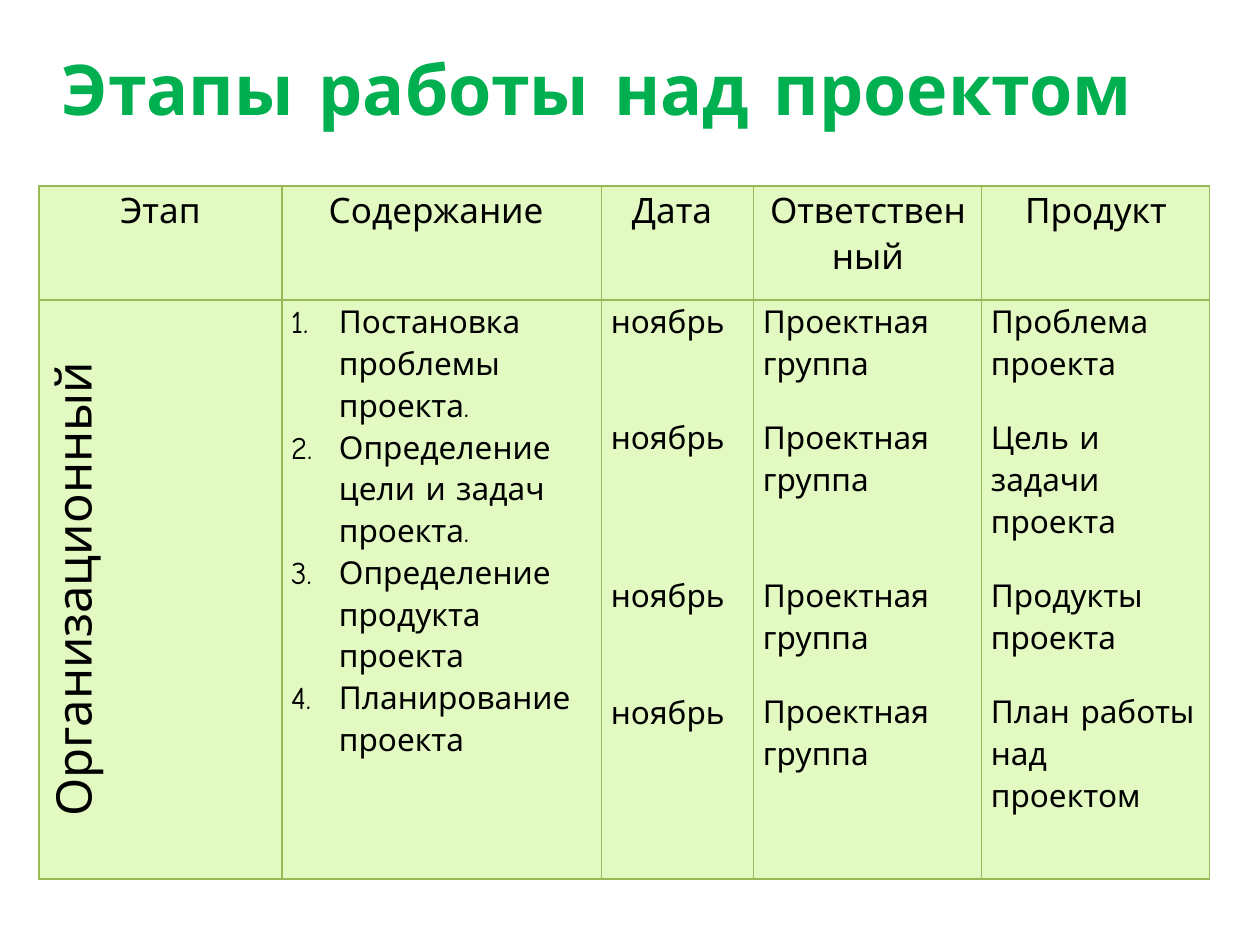
from lxml import etree
from pptx import Presentation, util as u
from pptx.dml.color import RGBColor
from pptx.enum import text
from pptx.oxml import ns

PX = 914400 / 126
FONT = "Comic Neue"
GREEN = RGBColor(0x00, 0xB0, 0x50)
BLACK = RGBColor(0x00, 0x00, 0x00)
CELL_FILL = RGBColor(0xE2, 0xFA, 0xC2)
BORDER = RGBColor(0x98, 0xB9, 0x55)

COLUMNS = [243, 320, 152, 228, 228]
ROWS = [114, 579]
HEADERS = ["Этап", "Содержание ", "Дата ", "Ответственный", "Продукт"]
STAGE = "Организационный"
TASKS = [
    "Постановка проблемы проекта.",
    "Определение цели и задач проекта.",
    "Определение продукта проекта",
    "Планирование проекта",
]
PRODUCTS = [
    "Проблема проекта",
    "Цель и задачи проекта",
    "Продукты проекта",
    "План работы над проектом",
]
# Space before each entry, in points, keeps the stages of all columns level.
DATE_GAPS = [0, 42.5, 66.4, 42.5]
GROUP_GAPS = [0, 18.6, 42.5, 18.6]
PRODUCT_GAPS = [0, 18.6, 18.6, 18.6]


def px(length):
    return u.Emu(round(length * PX))


def add_element(parent, tag, **attributes):
    return etree.SubElement(parent, ns.qn(tag), attributes)


class SlideBuilder:
    """Holds the text style and the current slide."""

    def __init__(self, slide):
        self.slide = slide

    def style(self, paragraph, size, color=BLACK, bold=False):
        for run in paragraph.runs:
            run.font.name = FONT
            run.font.size = u.Pt(size)
            run.font.color.rgb = color
            run.font.bold = bold

    def title(self, wording, left, top, width, height):
        shape = self.slide.shapes.title
        shape.left, shape.top = px(left), px(top)
        shape.width, shape.height = px(width), px(height)
        frame = shape.text_frame
        frame.text = wording
        frame.word_wrap = True
        frame.vertical_anchor = text.MSO_ANCHOR.TOP
        frame.paragraphs[0].alignment = text.PP_ALIGN.LEFT
        self.style(frame.paragraphs[0], 40, GREEN, bold=True)

    def table(self, left, top, columns, rows):
        shape = self.slide.shapes.add_table(
            len(rows), len(columns), px(left), px(top), px(sum(columns)), px(sum(rows)))
        table = shape.table
        table.first_row = table.horz_banding = False
        for column, width in zip(table.columns, columns):
            column.width = px(width)
        for row, height in zip(table.rows, rows):
            row.height = px(height)
        for cell in table.iter_cells():
            self.frame_cell(cell)
        return table

    def frame_cell(self, cell):
        """Set the margins, borders and fill of a cell."""
        cell.margin_left = cell.margin_right = px(9)
        cell.margin_top = cell.margin_bottom = 0
        properties = cell._tc.get_or_add_tcPr()
        for side in ("a:lnL", "a:lnR", "a:lnT", "a:lnB"):
            line = add_element(properties, side, w=str(u.Pt(0.75)))
            add_element(add_element(line, "a:solidFill"), "a:srgbClr", val=str(BORDER))
        cell.fill.solid()
        cell.fill.fore_color.rgb = CELL_FILL

    def fill_cell(self, cell, entries, size=18, gaps=None, centred=False, numbered=False):
        cell.text_frame.text = "\n".join(entries)
        for index, paragraph in enumerate(cell.text_frame.paragraphs):
            if numbered:
                self.number(paragraph)
            paragraph.line_spacing = 1.15
            if centred:
                paragraph.alignment = text.PP_ALIGN.CENTER
            if gaps and gaps[index]:
                paragraph.space_before = u.Pt(gaps[index])
            self.style(paragraph, size)

    def number(self, paragraph):
        properties = paragraph._p.get_or_add_pPr()
        properties.set("marL", str(px(48)))
        properties.set("indent", str(-px(48)))
        add_element(properties, "a:buFont", typeface="+mj-lt")
        add_element(properties, "a:buAutoNum", type="arabicPeriod")


def main():
    presentation = Presentation()
    presentation.slide_width, presentation.slide_height = u.Inches(10), u.Inches(7.5)
    slide = presentation.slides.add_slide(presentation.slide_layouts[5])
    builder = SlideBuilder(slide)

    builder.title("Этапы работы над проектом", 49, 39, 1172, 97)
    table = builder.table(39, 186, COLUMNS, ROWS)
    for column, header in enumerate(HEADERS):
        builder.fill_cell(table.cell(0, column), [header], size=20, centred=True)

    stage, tasks, dates, groups, products = (table.cell(1, i) for i in range(len(COLUMNS)))
    stage._tc.get_or_add_tcPr().set("vert", "vert270")
    builder.fill_cell(stage, [STAGE], size=28, centred=True)
    builder.fill_cell(tasks, TASKS, numbered=True)
    builder.fill_cell(dates, ["ноябрь"] * len(TASKS), gaps=DATE_GAPS)
    builder.fill_cell(groups, ["Проектная группа"] * len(TASKS), gaps=GROUP_GAPS)
    builder.fill_cell(products, PRODUCTS, gaps=PRODUCT_GAPS)

    presentation.save("out.pptx")


if __name__ == "__main__":
    main()
